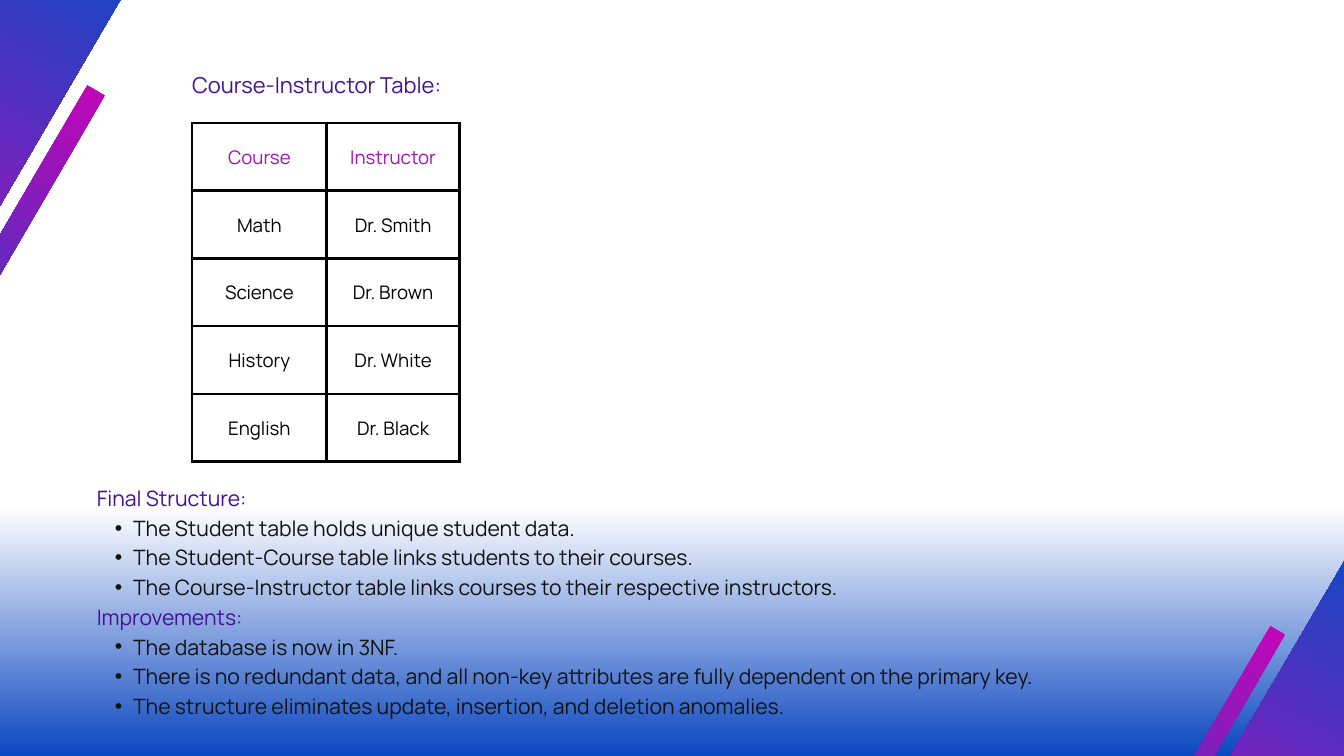
from lxml.etree import SubElement
from pptx import Presentation
from pptx.dml.color import RGBColor
from pptx.enum.shapes import MSO_SHAPE
from pptx.enum.text import MSO_ANCHOR, MSO_AUTO_SIZE, PP_ALIGN
from pptx.oxml import parse_xml
from pptx.oxml.ns import nsdecls, qn
from pptx.util import Inches, Pt

FONT = "Manrope"
HEADING, HEADER, BODY, BLACK = "431096", "A80FB9", "121212", "000000"
BAND_STOPS = [(0, "51048D"), (50, "054CC4"), (100, "C405B7")]
BAR_STOPS = [(0, "C405B7"), (50, "054CC4"), (100, "51048D")]
BACKGROUND_STOPS = [(0, "FFFFFF"), (67, "FFFFFF"), (100, "0B47C0")]


def color(value):
    return RGBColor.from_string(value)


class SlideBuilder:
    """Holds the style and the current slide."""

    def __init__(self, deck, font):
        self.page = deck.slides.add_slide(deck.slide_layouts[6])
        self.font = font

    def gradient(self, fill, element, stops):
        """Fill with a top-to-bottom gradient of (percent, colour) stops."""
        fill.gradient()
        gradient = element.find(".//" + qn("a:gradFill"))
        for child in list(gradient):
            gradient.remove(child)
        stop_list = SubElement(gradient, qn("a:gsLst"))
        for percent, value in stops:
            stop = SubElement(stop_list, qn("a:gs"), pos=str(percent * 1000))
            SubElement(stop, qn("a:srgbClr"), val=value)
        SubElement(gradient, qn("a:lin"), ang="5400000", scaled="0")

    def background(self, stops):
        self.gradient(self.page.background.fill, self.page.element, stops)

    def stripe(self, left, top, width, height, stops):
        shape = self.page.shapes.add_shape(
            MSO_SHAPE.RECTANGLE, Inches(left), Inches(top), Inches(width), Inches(height))
        shape.rotation = 30.3
        shape.shadow.inherit = False
        shape.line.fill.background()
        self.gradient(shape.fill, shape.element, stops)

    def style(self, paragraph, size, value, spacing):
        paragraph.line_spacing = Pt(spacing)
        paragraph.font.name = self.font
        paragraph.font.size = Pt(size)
        paragraph.font.color.rgb = color(value)

    def bullet(self, paragraph):
        paragraph.level = 1
        properties = paragraph._p.get_or_add_pPr()
        properties.set("marL", str(Inches(0.54)))
        properties.set("indent", str(Inches(-0.27)))
        mark_font = SubElement(properties, qn("a:buFont"), typeface="Arial")
        mark_font.addnext(parse_xml(f'<a:buChar {nsdecls("a")} char="•"/>'))

    def text(self, left, top, width, height, lines, size, spacing):
        """Add a text box; lines are (text, is_bullet) pairs."""
        box = self.page.shapes.add_textbox(
            Inches(left), Inches(top), Inches(width), Inches(height))
        frame = box.text_frame
        frame.word_wrap = True
        frame.auto_size = MSO_AUTO_SIZE.SHAPE_TO_FIT_TEXT
        frame.margin_left = frame.margin_right = frame.margin_top = frame.margin_bottom = 0
        for index, (words, is_bullet) in enumerate(lines):
            paragraph = frame.add_paragraph() if index else frame.paragraphs[0]
            paragraph.text = words
            self.style(paragraph, size, BODY if is_bullet else HEADING, spacing)
            if is_bullet:
                self.bullet(paragraph)

    def borders(self, cell, width, value):
        properties = cell._tc.get_or_add_tcPr()
        for index, side in enumerate(("lnL", "lnR", "lnT", "lnB")):
            properties.insert(index, parse_xml(
                f'<a:{side} {nsdecls("a")} w="{Pt(width)}"><a:solidFill>'
                f'<a:srgbClr val="{value}"/></a:solidFill></a:{side}>'))

    def table(self, left, top, column_widths, height, rows):
        table = self.page.shapes.add_table(
            len(rows), len(column_widths), Inches(left), Inches(top),
            Inches(sum(column_widths)), Inches(height)).table
        table.first_row = table.horz_banding = False
        for column, width in zip(table.columns, column_widths):
            column.width = Inches(width)
        for row_index, row in enumerate(rows):
            for column_index, words in enumerate(row):
                cell = table.cell(row_index, column_index)
                cell.fill.background()
                cell.vertical_anchor = MSO_ANCHOR.MIDDLE
                cell.margin_left = cell.margin_right = Inches(0.21)
                cell.margin_top = cell.margin_bottom = Inches(0.21)
                paragraph = cell.text_frame.paragraphs[0]
                paragraph.text = words
                paragraph.alignment = PP_ALIGN.CENTER
                self.style(paragraph, 20, BLACK if row_index else HEADER, 28)
                self.borders(cell, 3, BLACK)


def main():
    deck = Presentation()
    deck.slide_width, deck.slide_height = Inches(20), Inches(11.25)
    builder = SlideBuilder(deck, FONT)
    builder.background(BACKGROUND_STOPS)

    # Diagonal corner stripes: a wide band and a thin bar in each corner
    builder.stripe(-0.98, -7.41, 3.49, 11.41, BAND_STOPS)
    builder.stripe(-1.77, 0.52, 0.3, 12.09, BAR_STOPS)
    builder.stripe(20.12, 3.18, 3.49, 10.89, BAND_STOPS)
    builder.stripe(15.9, 8.57, 0.25, 11.85, BAR_STOPS)

    # Course and instructor table
    builder.table(2.86, 1.83, (2, 1.98), 5.04, [
        ("Course", "Instructor"),
        ("Math", "Dr. Smith"),
        ("Science", "Dr. Brown"),
        ("History", "Dr. White"),
        ("English", "Dr. Black"),
    ])

    # Conclusions
    builder.text(1.44, 7.16, 15.75, 3.89, [
        ("Final Structure:", False),
        ("The Student table holds unique student data.", True),
        ("The Student-Course table links students to their courses.", True),
        ("The Course-Instructor table links courses to their respective instructors.", True),
        ("Improvements:", False),
        ("The database is now in 3NF.", True),
        ("There is no redundant data, and all non-key attributes are fully dependent "
         "on the primary key.", True),
        ("The structure eliminates update, insertion, and deletion anomalies.", True),
    ], 22.7, 31.8)

    # Table heading
    builder.text(2.86, 1, 16.89, 0.46, [("Course-Instructor Table:", False)], 23.5, 32.9)

    deck.save("out.pptx")


if __name__ == "__main__":
    main()
